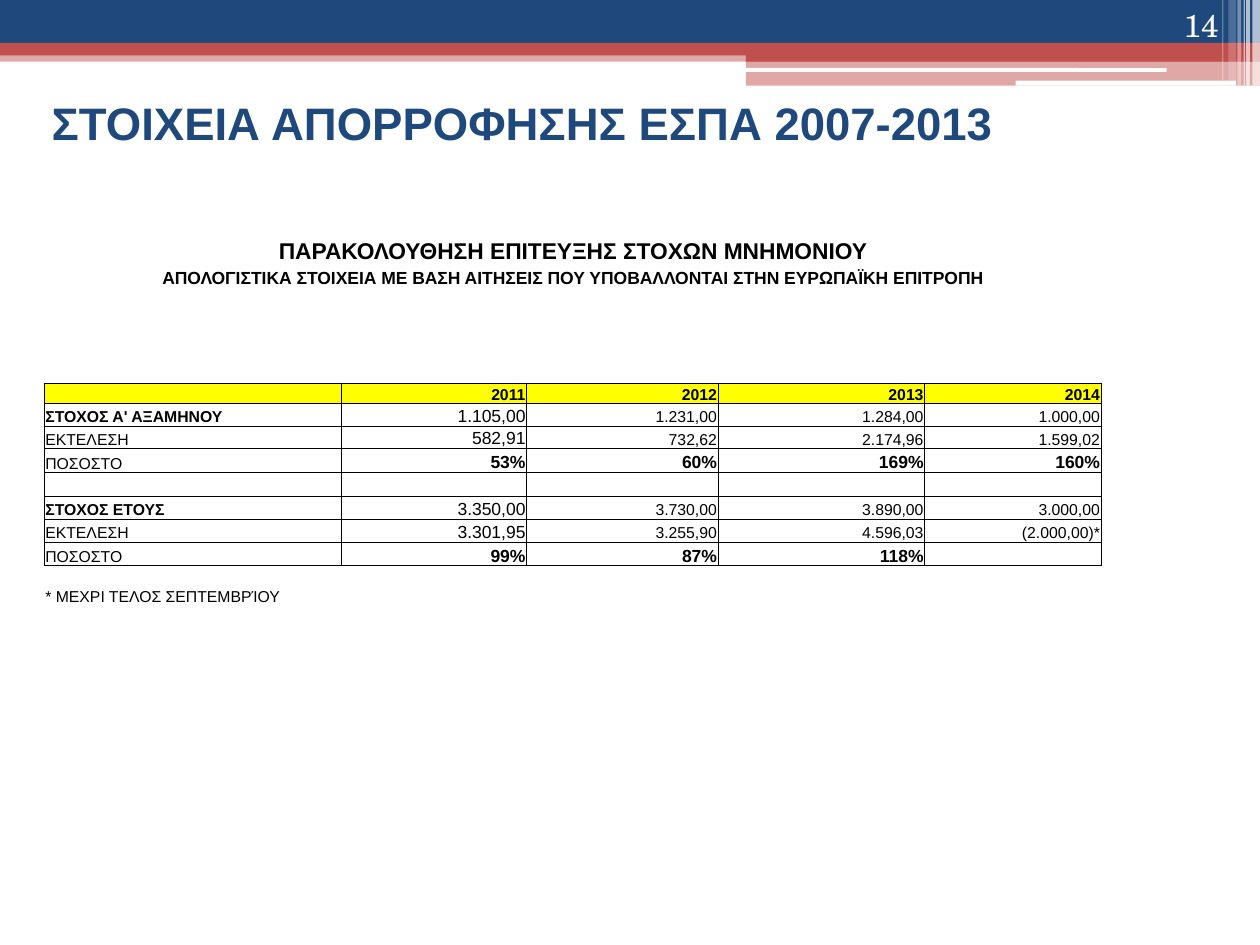
"""Build the slide on absorption of the 2007-2013 programme funds."""
from typing import NamedTuple

import pptx
import pptx.dml.color
import pptx.enum.shapes
import pptx.enum.text
import pptx.oxml.ns
import pptx.util
from lxml import etree

Inches, Pt = pptx.util.Inches, pptx.util.Pt
qn = pptx.oxml.ns.qn
ALIGN = pptx.enum.text.PP_ALIGN
ANCHOR = pptx.enum.text.MSO_ANCHOR
SHAPE = pptx.enum.shapes.MSO_SHAPE

NAVY, RED, WHITE, BLACK, YELLOW = "1F497D", "C0504D", "FFFFFF", "000000", "FFFF00"
NO_STYLE = "{2D5ABB26-0587-4C30-8999-92F81FD0307C}"


class Bar(NamedTuple):
    left: float
    top: float
    width: float
    height: float
    color: str
    opacity: int = 100
    rounded: bool = False


class Style(NamedTuple):
    size: float
    bold: bool = False
    align: ALIGN = ALIGN.LEFT
    color: str = BLACK
    font: str = "Arial"


BARS = [
    Bar(0, 0.4, 10, 0.09, RED, 50),
    Bar(0, 0, 10, 0.34, NAVY),
    Bar(0, 0.34, 10, 0.1, RED),
    Bar(5.92, 0.39, 4.08, 0.1, RED),
    Bar(5.92, 0.48, 4.08, 0.2, RED, 50),
    Bar(5.91, 0.54, 3.35, 0.03, WHITE, rounded=True),
    Bar(8.06, 0.64, 1.75, 0.04, WHITE, rounded=True),
    Bar(9.94, 0, 0.06, 0.68, WHITE, 65),
    Bar(9.89, 0, 0.03, 0.68, WHITE, 65),
    Bar(9.87, 0, 0.01, 0.68, WHITE, 60),
    Bar(9.82, 0, 0.03, 0.68, WHITE, 40),
    Bar(9.75, 0, 0.06, 0.64, WHITE, 20),
    Bar(9.7, 0, 0.01, 0.64, WHITE, 30),
]

COLS = [2.36, 1.47, 1.52, 1.64, 1.4, 0.61]
ROWS = [0.23, 0.19, 0.2, 0.23, 0.16, 0.16, 0.16, 0.18, 0.18, 0.19, 0.19,
        0.18, 0.18, 0.19, 0.16, 0.16]
HEADINGS = [
    ("ΠΑΡΑΚΟΛΟΥΘΗΣΗ ΕΠΙΤΕΥΞΗΣ ΣΤΟΧΩΝ ΜΝΗΜΟΝΙΟΥ", 13),
    ("ΑΠΟΛΟΓΙΣΤΙΚΑ ΣΤΟΙΧΕΙΑ ΜΕ ΒΑΣΗ ΑΙΤΗΣΕΙΣ ΠΟΥ ΥΠΟΒΑΛΛΟΝΤΑΙ ΣΤΗΝ ΕΥΡΩΠΑΪΚΗ ΕΠΙΤΡΟΠΗ", 10),
    ("", 8),
]
FIRST_ROW = 6
DATA = [
    ["", "2011", "2012", "2013", "2014"],
    ["ΣΤΟΧΟΣ Α' ΑΞΑΜΗΝΟΥ", "1.105,00", "1.231,00", "1.284,00", "1.000,00"],
    ["ΕΚΤΕΛΕΣΗ", "582,91", "732,62", "2.174,96", "1.599,02"],
    ["ΠΟΣΟΣΤΟ", "53%", "60%", "169%", "160%"],
    ["", "", "", "", ""],
    ["ΣΤΟΧΟΣ ΕΤΟΥΣ", "3.350,00", "3.730,00", "3.890,00", "3.000,00"],
    ["ΕΚΤΕΛΕΣΗ", "3.301,95", "3.255,90", "4.596,03", "(2.000,00)*"],
    ["ΠΟΣΟΣΤΟ", "99%", "87%", "118%", ""],
]
FOOTNOTE = "* ΜΕΧΡΙ ΤΕΛΟΣ ΣΕΠΤΕΜΒΡΊΟΥ"


def rgb(color: str) -> pptx.dml.color.RGBColor:
    return pptx.dml.color.RGBColor.from_string(color)


def draw_bar(s, bar: Bar) -> None:
    kind = SHAPE.ROUNDED_RECTANGLE if bar.rounded else SHAPE.RECTANGLE
    sp = s.shapes.add_shape(kind, *map(Inches, bar[:4]))
    sp.shadow.inherit = False
    sp.line.fill.background()
    sp.fill.solid()
    sp.fill.fore_color.rgb = rgb(bar.color)
    if bar.opacity < 100:
        clr = sp._element.spPr.find(".//" + qn("a:srgbClr"))
        etree.SubElement(clr, qn("a:alpha"), val=str(bar.opacity * 1000))


def write(tf, text: str, style: Style):
    p = tf.paragraphs[0]
    p.text = text
    p.alignment = style.align
    for r in p.runs:
        r.font.name = style.font
        r.font.size = Pt(style.size)
        r.font.bold = style.bold
        r.font.color.rgb = rgb(style.color)
    if not text:
        etree.SubElement(p._p, qn("a:endParaRPr"), sz=str(style.size * 100))
    return p


def add_borders(cell) -> None:
    tc_pr = cell._tc.get_or_add_tcPr()
    for side in ("lnL", "lnR", "lnT", "lnB"):
        ln = etree.SubElement(tc_pr, qn("a:" + side), w=str(Pt(0.5)))
        fill = etree.SubElement(ln, qn("a:solidFill"))
        etree.SubElement(fill, qn("a:srgbClr"), val=BLACK)


def data_style(row: int, col: int, text: str) -> Style:
    if col == 0:
        return Style(9, bold=text.startswith("ΣΤΟΧΟΣ"))
    percent = text.endswith("%")
    large = percent or (col == 1 and row > 0)
    return Style(10 if large and text else 9, percent or row == 0, ALIGN.RIGHT)


def draw_table(s) -> None:
    frame = s.shapes.add_table(len(ROWS), len(COLS), Inches(0.35), Inches(1.87),
                               Inches(sum(COLS)), Inches(sum(ROWS)))
    table = frame.table
    table.first_row = table.horz_banding = False
    table._tbl.tblPr.find(qn("a:tableStyleId")).text = NO_STYLE
    for column, width in zip(table.columns, COLS):
        column.width = Inches(width)
    for i, height in enumerate(ROWS):
        table.rows[i].height = Inches(height)
        for j in range(len(COLS)):
            cell = table.cell(i, j)
            cell.margin_left = cell.margin_right = cell.margin_top = Inches(0.01)
            cell.margin_bottom = 0
            cell.vertical_anchor = ANCHOR.BOTTOM
            row = i - FIRST_ROW
            text, style = "", Style(8)
            if 0 <= row < len(DATA) and j < len(DATA[row]):
                text = DATA[row][j]
                style = data_style(row, j, text)
                add_borders(cell)
            elif i < len(HEADINGS) and j == 0:
                text, size = HEADINGS[i]
                style = Style(size, True, ALIGN.CENTER)
                cell.merge(table.cell(i, 4))
            elif i == len(ROWS) - 1 and j == 0:
                text, style = FOOTNOTE, Style(9)
            write(cell.text_frame, text, style)
            if row == 0 and j < len(DATA[0]):
                cell.fill.solid()
                cell.fill.fore_color.rgb = rgb(YELLOW)
            else:
                cell.fill.background()


def draw_title(s) -> None:
    sp = s.shapes.title
    sp.left, sp.top, sp.width, sp.height = map(Inches, (0.31, 0.55, 8.69, 0.78))
    tf = sp.text_frame
    tf.word_wrap = True
    tf.auto_size = pptx.enum.text.MSO_AUTO_SIZE.NONE
    tf.vertical_anchor = ANCHOR.MIDDLE
    p = write(tf, "ΣΤΟΙΧΕΙΑ ΑΠΟΡΡΟΦΗΣΗΣ ΕΣΠΑ 2007-2013", Style(26, True, color=NAVY))
    p.line_spacing = 1.15
    p.space_after = Pt(10)


def draw_page_number(s) -> None:
    sp = s.shapes.add_textbox(*map(Inches, (8.94, 0, 0.83, 0.4)))
    tf = sp.text_frame
    tf.word_wrap = True
    tf.vertical_anchor = ANCHOR.BOTTOM
    write(tf, "14", Style(18, False, ALIGN.RIGHT, WHITE, "TeX Gyre Schola"))


def main() -> None:
    prs = pptx.Presentation()
    prs.slide_width, prs.slide_height = Inches(10), Inches(7.5)
    s = prs.slides.add_slide(prs.slide_layouts[5])
    for bar in BARS:
        draw_bar(s, bar)
    draw_table(s)
    draw_title(s)
    draw_page_number(s)
    prs.save("out.pptx")


if __name__ == "__main__":
    main()
